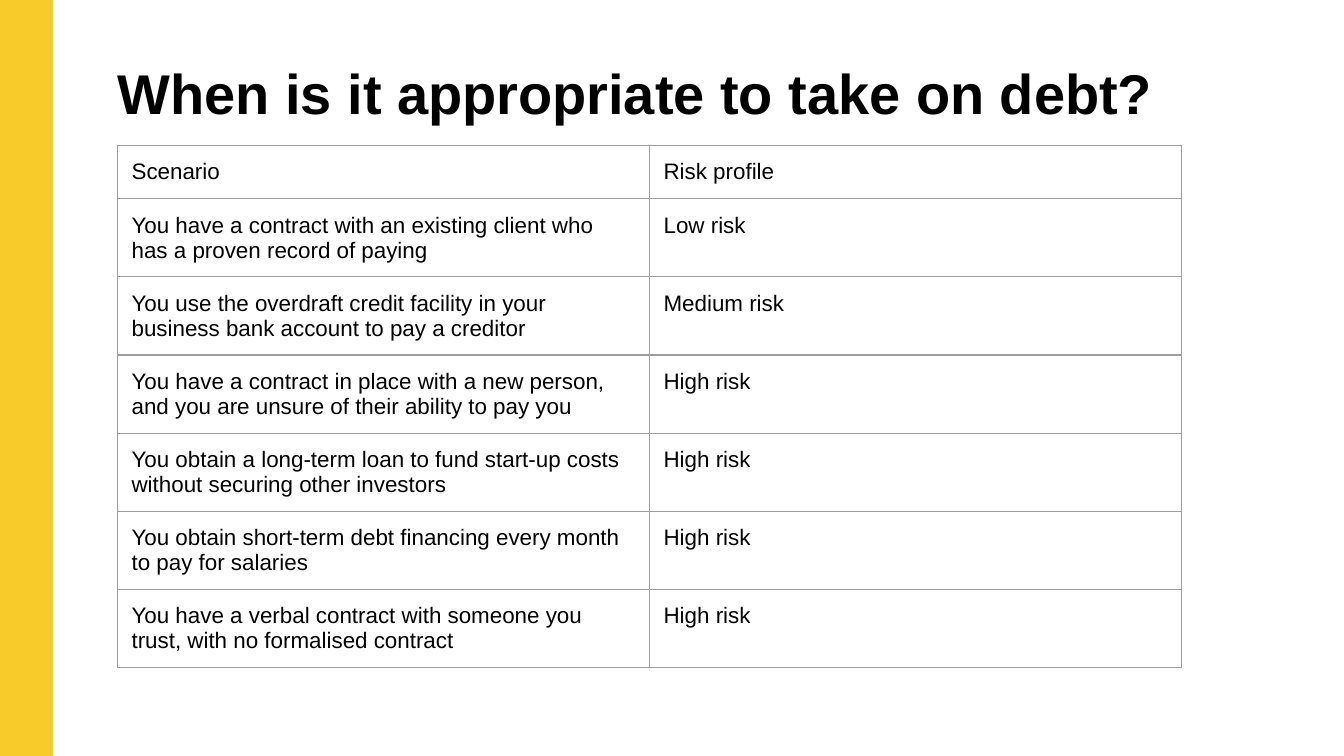
"""Build a slide with a table of debt scenarios and their risk profiles."""
from lxml.etree import SubElement
from pptx import Presentation
from pptx.dml.color import RGBColor as RGB
from pptx.enum.shapes import MSO_SHAPE as SHAPE
from pptx.enum.text import MSO_ANCHOR as ANCHOR, MSO_AUTO_SIZE as FIT, PP_ALIGN as ALIGN
from pptx.oxml.ns import qn
from pptx.util import Pt

PX = 9525
INSET = 10 * PX
COLORS = {"accent": "F8CB2A", "text": "000000", "border": "9E9E9E"}
ROWS = [
    ("Scenario", "Risk profile"),
    ("You have a contract with an existing client who has a proven record of paying", "Low risk"),
    ("You use the overdraft credit facility in your business bank account to pay a creditor", "Medium risk"),
    ("You have a contract in place with a new person, and you are unsure of their ability to pay you", "High risk"),
    ("You obtain a long-term loan to fund start-up costs without securing other investors", "High risk"),
    ("You obtain short-term debt financing every month to pay for salaries", "High risk"),
    ("You have a verbal contract with someone you trust, with no formalised contract", "High risk"),
]
HEADER_H, ROW_H, COL_W = 32, 40, 380


def add_run(p, text, size, bold=False):
    p.alignment = ALIGN.LEFT
    r = p.add_run()
    r.text = text
    r.font.name = "Arial"
    r.font.size = Pt(size)
    r.font.bold = bold
    r.font.color.rgb = RGB.from_string(COLORS["text"])


def set_borders(cell):
    tc_pr = cell._tc.get_or_add_tcPr()
    for i, side in enumerate(("lnL", "lnR", "lnT", "lnB")):
        ln = tc_pr.makeelement(qn(f"a:{side}"), {"w": str(Pt(0.75))})
        fill = SubElement(ln, qn("a:solidFill"))
        SubElement(fill, qn("a:srgbClr"), val=COLORS["border"])
        tc_pr.insert(i, ln)


prs = Presentation()
prs.slide_width, prs.slide_height = 960 * PX, 540 * PX
s = prs.slides.add_slide(prs.slide_layouts[5])

bar = s.shapes.add_shape(SHAPE.RECTANGLE, 0, 0, 38 * PX, 540 * PX)
bar.shadow.inherit = False
bar.fill.solid()
bar.fill.fore_color.rgb = RGB.from_string(COLORS["accent"])
bar.line.fill.background()

title = s.shapes.title
title.left, title.top, title.width, title.height = 74 * PX, 28 * PX, 801 * PX, 76 * PX
tf = title.text_frame
tf.word_wrap = True
tf.auto_size = FIT.NONE
tf.vertical_anchor = ANCHOR.MIDDLE
tf.margin_left = tf.margin_right = tf.margin_top = tf.margin_bottom = INSET
add_run(tf.paragraphs[0], "When is it appropriate to take on debt?", 30, bold=True)

table_h = HEADER_H + ROW_H * (len(ROWS) - 1)
table = s.shapes.add_table(len(ROWS), 2, 84 * PX, 104 * PX, 2 * COL_W * PX, table_h * PX).table
table.first_row = table.horz_banding = False
for col in table.columns:
    col.width = COL_W * PX
for i, texts in enumerate(ROWS):
    table.rows[i].height = (ROW_H if i else HEADER_H) * PX
    for j, text in enumerate(texts):
        cell = table.cell(i, j)
        cell.fill.background()
        cell.vertical_anchor = ANCHOR.TOP
        cell.margin_left = cell.margin_right = cell.margin_top = cell.margin_bottom = INSET
        add_run(cell.text_frame.paragraphs[0], text, 12)
        set_borders(cell)

prs.save("out.pptx")
